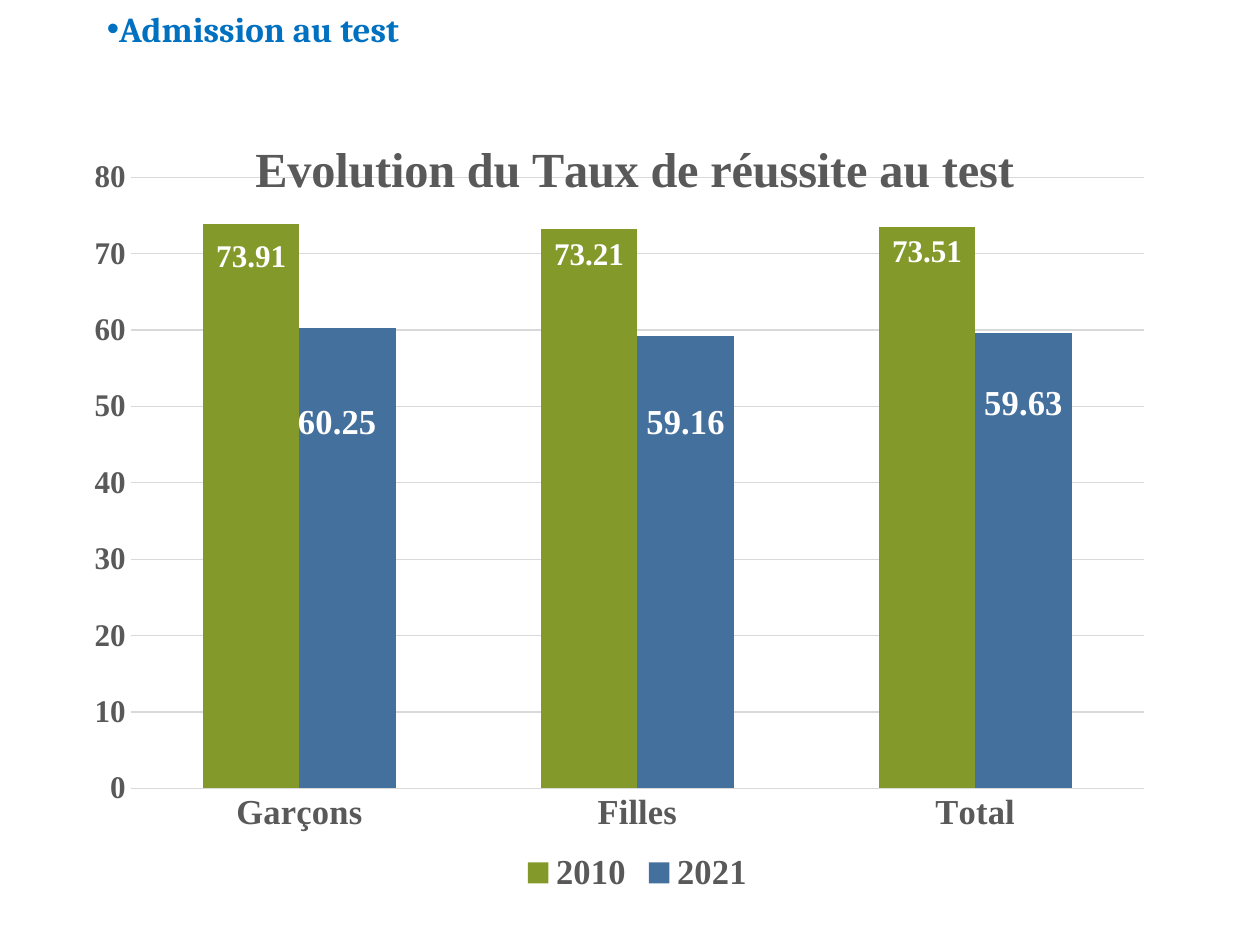
from dataclasses import dataclass

from lxml import etree
from pptx import Presentation
from pptx.chart.data import CategoryChartData
from pptx.dml.color import RGBColor
from pptx.enum.chart import (
    XL_CHART_TYPE, XL_LABEL_POSITION, XL_LEGEND_POSITION, XL_TICK_MARK)
from pptx.enum.text import MSO_ANCHOR, MSO_AUTO_SIZE
from pptx.oxml.ns import qn
from pptx.util import Inches, Pt

COLUMNS = XL_CHART_TYPE.COLUMN_CLUSTERED
OUTSIDE_END = XL_LABEL_POSITION.OUTSIDE_END
LEGEND_BOTTOM = XL_LEGEND_POSITION.BOTTOM
NO_TICK = XL_TICK_MARK.NONE
MIDDLE = MSO_ANCHOR.MIDDLE
FIT_SHAPE = MSO_AUTO_SIZE.SHAPE_TO_FIT_TEXT

SLIDE_WIDTH, SLIDE_HEIGHT = Inches(10), Inches(7.5)
CHART_2012 = "http://schemas.microsoft.com/office/drawing/2012/chart"
LABEL_EXTENSION = "{CE6537A1-D6FC-4f65-9D91-7224C49458BB}"


@dataclass(frozen=True)
class Theme:
    heading_font: str = "Cambria"
    chart_font: str = "Times New Roman"
    bullet_font: str = "Arial"
    heading: str = "0070C0"
    text: str = "595959"
    grid: str = "D9D9D9"
    label: str = "FFFFFF"
    title_size: int = 28
    large: int = 20
    small: int = 18


THEME = Theme()
CATEGORIES = ("Garçons", "Filles", "Total")
# name, values, colour, label size, label shifts as shares of the chart
SERIES = (
    ("2010", (73.91, 73.21, 73.51), "83992A", THEME.small,
     ((0, 0.07), (0, 0.06), (0, 0.06))),
    ("2021", (60.25, 59.16, 59.63), "44709D", THEME.large,
     ((-0.01, 0.15), (0, 0.14), (0, 0.12))),
)


def place(left, top, width, height):
    """Turn shares of the slide into lengths."""
    return (int(SLIDE_WIDTH * left), int(SLIDE_HEIGHT * top),
            int(SLIDE_WIDTH * width), int(SLIDE_HEIGHT * height))


def style_font(font, size, color=THEME.text, name=THEME.chart_font):
    font.name = name
    font.size = Pt(size)
    font.bold = True
    font.color.rgb = RGBColor.from_string(color)


def set_layout(parent, index, **settings):
    """Give a chart part a manual layout, as child number index."""
    for old_layout in parent.findall(qn("c:layout")):
        parent.remove(old_layout)
    layout = etree.Element(qn("c:layout"))
    manual = etree.SubElement(layout, qn("c:manualLayout"))
    for name, value in settings.items():
        etree.SubElement(manual, qn(f"c:{name}")).set("val", str(value))
    parent.insert(index, layout)


def hide_leader_lines(labels_element):
    for old_setting in labels_element.findall(qn("c:showLeaderLines")):
        old_setting.set("val", "0")
    extensions = etree.SubElement(labels_element, qn("c:extLst"))
    extension = etree.SubElement(extensions, qn("c:ext"),
                                 nsmap={"c15": CHART_2012})
    extension.set("uri", LABEL_EXTENSION)
    etree.SubElement(extension,
                     f"{{{CHART_2012}}}showLeaderLines").set("val", "0")


def add_heading(slide, text):
    box = slide.shapes.add_textbox(*place(0.075, 0, 0.28, 0.06))
    frame = box.text_frame
    frame.word_wrap = False
    frame.auto_size = FIT_SHAPE
    frame.vertical_anchor = MIDDLE
    frame.text = text
    paragraph = frame.paragraphs[0]
    properties = paragraph._p.get_or_add_pPr()
    bullet_font = etree.SubElement(properties, qn("a:buFont"))
    bullet_font.set("typeface", THEME.bullet_font)
    etree.SubElement(properties, qn("a:buChar")).set("char", "•")
    style_font(paragraph.runs[0].font, THEME.large, THEME.heading,
               THEME.heading_font)


def add_chart_title(chart, text):
    chart.has_title = True
    title = chart.chart_title
    title.text_frame.text = text
    style_font(title.text_frame.paragraphs[0].runs[0].font, THEME.title_size)
    element = title._element
    set_layout(element, 1, xMode="edge", yMode="edge", x=0.13, y=0.03)
    element.find(qn("c:overlay")).set("val", "1")


def style_axes(chart):
    for axis, size in ((chart.category_axis, THEME.large),
                       (chart.value_axis, THEME.small)):
        axis.major_tick_mark = axis.minor_tick_mark = NO_TICK
        axis.format.line.fill.background()
        style_font(axis.tick_labels.font, size)
    values = chart.value_axis
    values.minimum_scale, values.maximum_scale, values.major_unit = 0, 80, 10
    grid_line = values.major_gridlines.format.line
    grid_line.color.rgb = RGBColor.from_string(THEME.grid)
    grid_line.width = Pt(0.75)


def style_series(series, color, label_size, shifts):
    series.format.fill.solid()
    series.format.fill.fore_color.rgb = RGBColor.from_string(color)
    labels = series.data_labels
    labels.show_value = True
    labels.position = OUTSIDE_END
    style_font(labels.font, label_size, THEME.label)
    for index in range(len(shifts)):
        label = series.points[index].data_label
        style_font(label.font, label_size, THEME.label)
        label.position = OUTSIDE_END
    for element, (x, y) in zip(series._element.iter(qn("c:dLbl")), shifts):
        set_layout(element, 1, x=x, y=y)
    hide_leader_lines(labels._element)


def add_success_chart(slide):
    data = CategoryChartData()
    data.categories = CATEGORIES
    for name, values, *_ in SERIES:
        data.add_series(name, values)
    frame = slide.shapes.add_chart(
        COLUMNS, *place(0.075, 0.112, 0.85, 0.84), data)
    chart = frame.chart
    chart.font.name = THEME.chart_font
    add_chart_title(chart, "Evolution du Taux de réussite au test")
    style_axes(chart)

    plot = chart.plots[0]
    plot.gap_width, plot.overlap = 150, 0
    plot.vary_by_categories = False
    for series, (_, _, color, size, shifts) in zip(plot.series, SERIES):
        style_series(series, color, size, shifts)

    chart.has_legend = True
    chart.legend.position = LEGEND_BOTTOM
    chart.legend.include_in_layout = False
    style_font(chart.legend.font, THEME.large)
    plot_area = chart._chartSpace.find(f".//{qn('c:plotArea')}")
    set_layout(plot_area, 0, layoutTarget="inner", xMode="edge", yMode="edge",
               x=0.02, y=0.09, w=0.96, h=0.77)


def main():
    presentation = Presentation()
    presentation.slide_width = SLIDE_WIDTH
    presentation.slide_height = SLIDE_HEIGHT
    slide = presentation.slides.add_slide(presentation.slide_layouts[6])
    add_heading(slide, "Admission au test")
    add_success_chart(slide)
    presentation.save("out.pptx")


if __name__ == "__main__":
    main()
